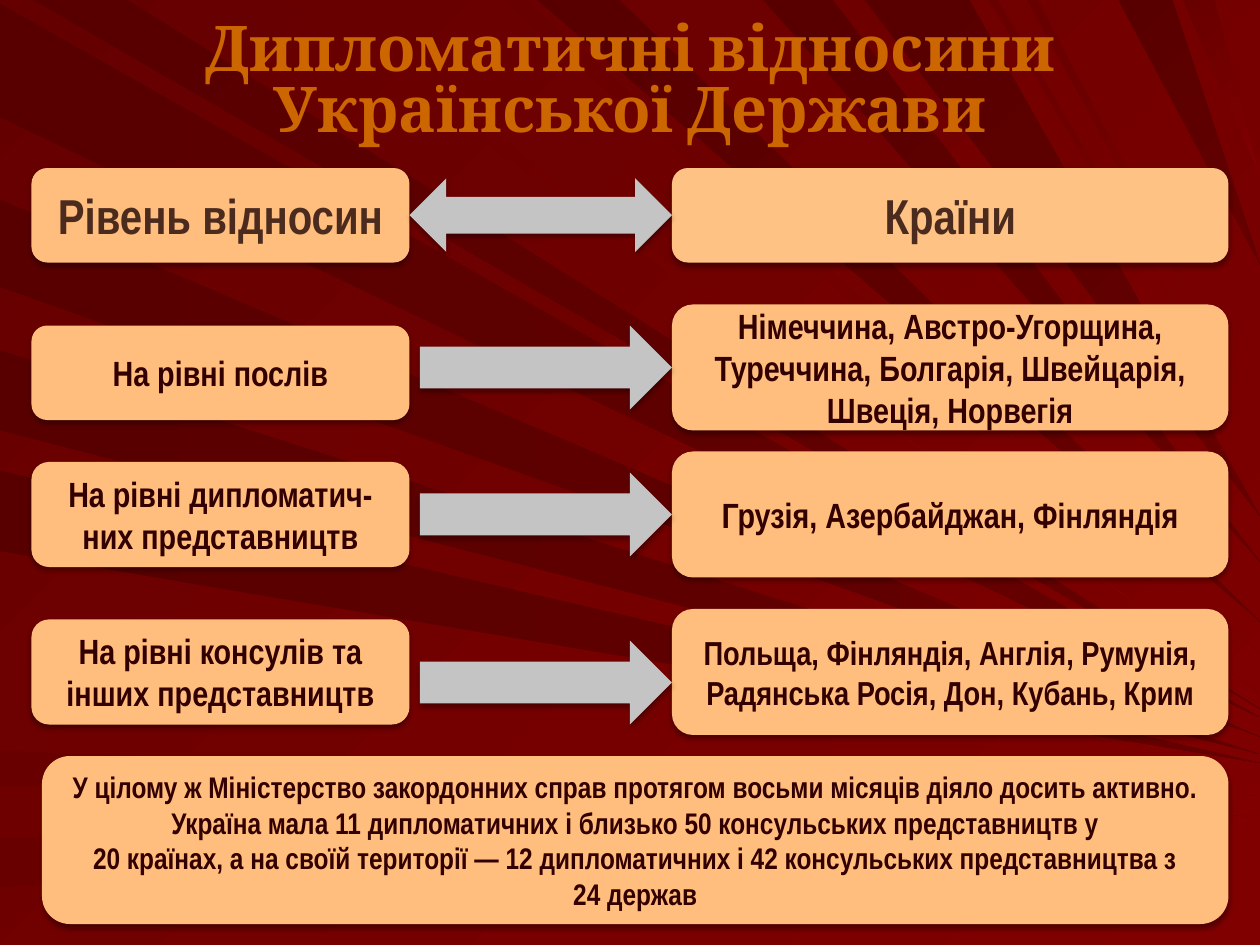
import pptx
import pptx.util
import pptx.dml.color
import pptx.enum.shapes
import pptx.enum.text
import pptx.oxml
import pptx.oxml.ns

Pt = pptx.util.Pt
SHAPE = pptx.enum.shapes.MSO_SHAPE
CENTER = pptx.enum.text.PP_ALIGN.CENTER
MIDDLE = pptx.enum.text.MSO_ANCHOR.MIDDLE

LEFT_RAYS = [(2, 67, 410), (114, 164, 421), (429, 449, 455), (479, 507, 466),
             (200, 246, 431), (269, 315, 436)]
TOP_RAYS = [(19, 73, 405), (162, 178, 396), (287, 300, 373), (307, 354, 355),
            (436, 476, 321), (494, 554, 295), (565, 570, 257), (587, 593, 242),
            (639, 670, 151), (676, 694, 101)]
WIDE_RAY = 30

LEVELS = [
    (["На рівні послів"], (186, 54),
     "Німеччина, Австро-Угорщина, Туреччина, Болгарія, Швейцарія, Швеція, Норвегія", 174, 20, 186),
    (["На рівні дипломатич-них представництв"], (264, 60),
     "Грузія, Азербайджан, Фінляндія", 258, 20, 270),
    (["На рівні консулів та", "інших представництв"], (354, 60),
     "Польща, Фінляндія, Англія, Румунія, Радянська Росія, Дон, Кубань, Крим", 348, 19, 366),
]
SUMMARY = [
    "У цілому ж Міністерство закордонних справ протягом восьми місяців діяло досить активно. "
    "Україна мала 11 дипломатичних і близько 50 консульських представництв у",
    "20 країнах, а на своїй території — 12 дипломатичних і 42 консульських представництва з\v24 держав",
]
SLIDE_W, SLIDE_H = 720, 540
LEFT_X, LEFT_W = 18, 216
RIGHT_X, RIGHT_W = 384, 318
ARROW_X, ARROW_W, ARROW_H = 240, 144, 48


def rgb(value):
    return pptx.dml.color.RGBColor.from_string(value)


def gradient(fill, start, end, angle):
    fill.gradient()
    fill.gradient_angle = -angle % 360
    for stop, color in zip(fill.gradient_stops, (start, end)):
        stop.color.rgb = rgb(color)


def add_ray(group, points, wide, angle):
    builder = group.shapes.build_freeform(*points[0], scale=Pt(1))
    builder.add_line_segments(points[1:], close=True)
    sp = builder.convert_to_shape()
    sp.shadow.inherit = False
    sp.line.fill.background()
    start, end = ("580000", "660000") if wide else ("680000", "800000")
    gradient(sp.fill, start, end, angle)


def add_rays(slide, width):
    group = slide.shapes.add_group_shape()
    for near, far, tip in LEFT_RAYS:
        add_ray(group, [(0, near), (0, far), (width, tip)], far - near > WIDE_RAY, 0)
    for near, far, tip in TOP_RAYS:
        add_ray(group, [(near, 0), (far, 0), (width, tip)], far - near > WIDE_RAY, 45)
    slide.shapes._spTree.insert(2, group._element)


def add_shadow(sp):
    sp.shadow.inherit = False
    effects = sp._element.spPr.find(pptx.oxml.ns.qn("a:effectLst"))
    effects.append(pptx.oxml.parse_xml(
        f'<a:outerShdw {pptx.oxml.ns.nsdecls("a")} blurRad="{Pt(3.1)}" dist="{Pt(1.8)}" '
        'dir="5400000" rotWithShape="0"><a:srgbClr val="000000">'
        '<a:alpha val="35000"/></a:srgbClr></a:outerShdw>'))


def add_block(slide, kind, box, fill):
    sp = slide.shapes.add_shape(kind, *map(Pt, box))
    sp.fill.solid()
    sp.fill.fore_color.rgb = rgb(fill)
    sp.line.fill.background()
    add_shadow(sp)
    return sp


def set_font(p, name, size, color):
    p.alignment = CENTER
    p.font.name = name
    p.font.size = Pt(size)
    p.font.bold = True
    p.font.color.rgb = rgb(color)


def add_card(slide, box, lines, size=20, color="330000", fill="FFBE7D"):
    tf = add_block(slide, SHAPE.FLOWCHART_ALTERNATE_PROCESS, box, fill).text_frame
    tf.word_wrap = True
    tf.vertical_anchor = MIDDLE
    tf.text = "\n".join(lines)
    for p in tf.paragraphs:
        set_font(p, "Arial Narrow", size, color)


def add_title(slide, box, text):
    title = slide.shapes.title
    title.left, title.top, title.width, title.height = map(Pt, box)
    tf = title.text_frame
    tf.text = text
    tf.word_wrap = True
    tf.vertical_anchor = MIDDLE
    p = tf.paragraphs[0]
    p.line_spacing = 0.8
    set_font(p, "Cambria", 36, "CC6600")


def add_header(slide, top, height):
    add_card(slide, (RIGHT_X, top, RIGHT_W, height), ["Країни"], 28, "4C2B1F", "FFC285")
    add_card(slide, (LEFT_X, top, LEFT_W, height), ["Рівень відносин"], 28, "4C2B1F")
    left = LEFT_X + LEFT_W
    add_block(slide, SHAPE.LEFT_RIGHT_ARROW, (left, top + 6, RIGHT_X - left, height - 12), "C4C4C4")


def add_level(slide, level, left_span, countries, right_top, size, arrow_top):
    add_card(slide, (LEFT_X, left_span[0], LEFT_W, left_span[1]), level)
    add_card(slide, (RIGHT_X, right_top, RIGHT_W, 72), [countries], size)
    add_block(slide, SHAPE.RIGHT_ARROW, (ARROW_X, arrow_top, ARROW_W, ARROW_H), "C4C4C4")


def main():
    prs = pptx.Presentation()
    prs.slide_width, prs.slide_height = Pt(SLIDE_W), Pt(SLIDE_H)
    slide = prs.slides.add_slide(prs.slide_layouts[5])
    gradient(slide.background.fill, "650000", "800000", 45)
    add_rays(slide, SLIDE_W)
    add_title(slide, (36, 0, 648, 96), "Дипломатичні відносини Української Держави")
    add_header(slide, 96, 54)
    for level in LEVELS:
        add_level(slide, *level)
    add_card(slide, (24, 432, 678, 96), SUMMARY, 17)
    prs.save("out.pptx")


if __name__ == "__main__":
    main()
